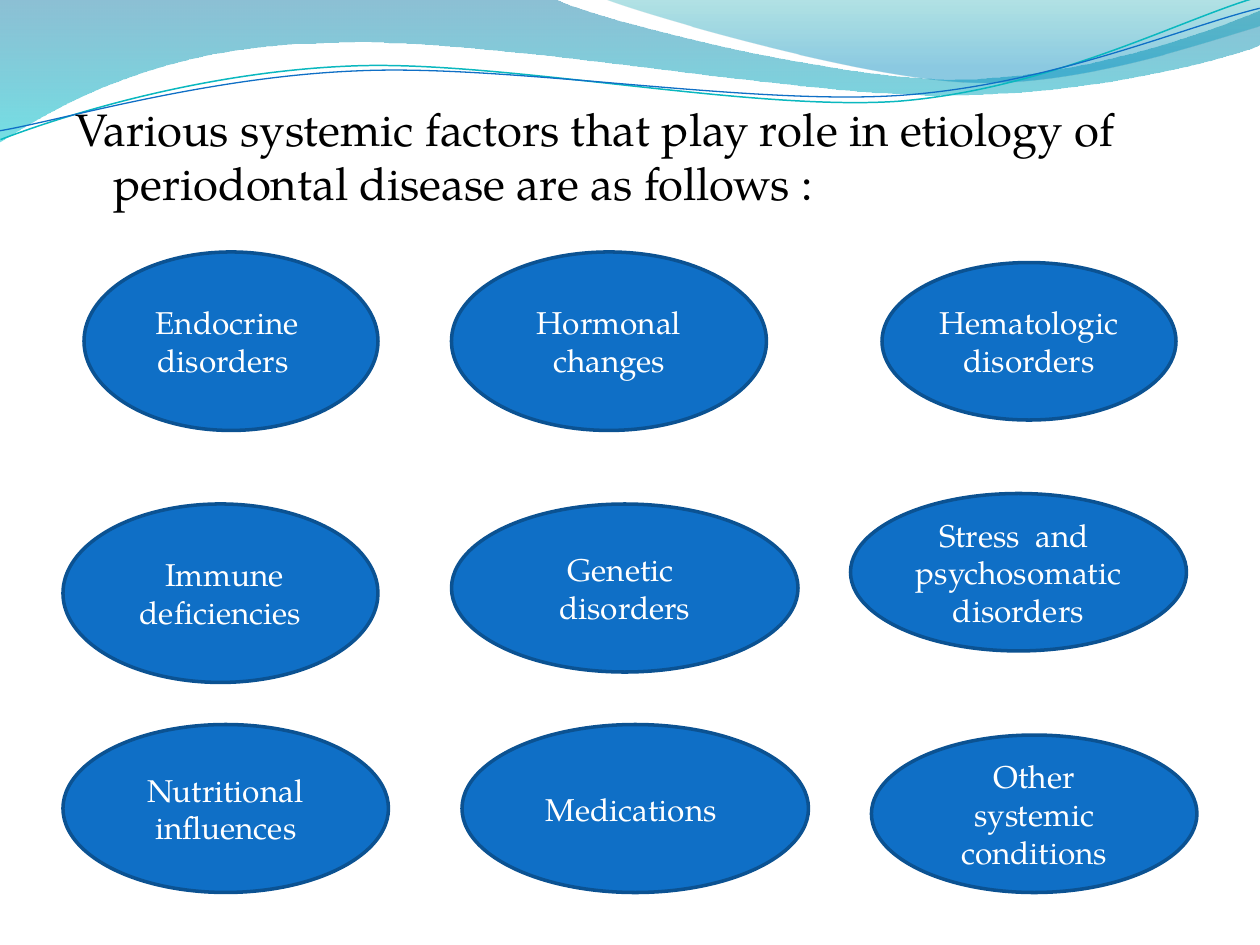
from lxml import etree
from pptx import Presentation
from pptx.dml.color import RGBColor
from pptx.enum.shapes import MSO_SHAPE
from pptx.enum.text import MSO_ANCHOR, PP_ALIGN
from pptx.oxml.ns import qn
from pptx.util import Emu, Pt

OVAL = MSO_SHAPE.OVAL
MIDDLE, TOP = MSO_ANCHOR.MIDDLE, MSO_ANCHOR.TOP
CENTER, LEFT = PP_ALIGN.CENTER, PP_ALIGN.LEFT

# Content: lengths in px, 126 to the inch; boxes in grid cells, 12 to the inch
PAGE = (1260, 945)
CELL = 10.5
HEADING = "Various systemic factors that play role in etiology of periodontal disease are as follows :"
HEADING_BOX = (6, 9, 108, 81)
HANGING = 38
FACTORS = [  # text, left, top, width, height
    ("Endocrine  disorders  ", 8, 24, 28, 17),
    (" Immune deficiencies", 6, 48, 30, 17),
    ("Hematologic disorders", 84, 25, 28, 15),
    ("Nutritional influences", 6, 69, 31, 16),
    ("Genetic  disorders", 43, 48, 33, 16),
    ("Stress  and  psychosomatic disorders", 81, 47, 32, 15),
    ("Medications ", 44, 69, 33, 16),
    ("Other systemic conditions", 83, 70, 31, 15),
    ("Hormonal changes", 43, 24, 30, 17),
]

# Outlines: a start, then points (2 numbers) or Bézier curves (6 numbers)
BAND = [(0, 0), (554, -1), (600, 21, 837, 79, 955, 79), (1075, 79, 1207, 33, 1260, 11),
        (1261, 45), (1239, 55, 1096, 96, 940, 95), (784, 95, 481, 35, 324, 43),
        (163, 45, 58, 105, -1, 142)]
CREST = [(604, -1), (641, 14, 859, 78, 969, 82), (1079, 87, 1211, 40, 1260, 26), (1260, 0)]
TEAL_WAVE = [(-2, 110), (58, 90, 200, 52, 350, 53), (498, 53, 745, 117, 896, 114),
             (1049, 109, 1184, 45, 1260, 27)]
BLUE_WAVE = [(-2, 101), (57, 94, 207, 57, 357, 58), (509, 58, 750, 112, 902, 108),
             (1052, 104, 1188, 52, 1262, 38)]
WAVE_ROTATION = 357.3

THEME = {
    "font": "TeX Gyre Pagella",
    "heading_size": 26, "factor_size": 18,
    "heading": "000000", "factor_text": "FFFFFF",
    "factor_fill": "0F6FC6", "factor_line": "0B5292", "factor_line_width": 2,
    # Gradient stops: position, colour, opacity in percent
    "band": [(0, "0074A1", 45), (1, "00C6CF", 55)],
    "crest": [(0, "00A1A9", 30), (0.8, "008BBF", 45)],
    "teal_wave": ("0AB8BF", 0.85), "blue_wave": ("0F6FC6", 0.75),
}


def px(length):
    return Emu(round(length * 914400 / 126))


def cells(box):
    return [px(count * CELL) for count in box]


def color(name):
    return RGBColor.from_string(name)


def add_outline(page, outline, close):
    """Draw straight steps between the nodes, then bend the curved ones."""
    nodes = [(px(step[-2]), px(step[-1])) for step in outline]
    builder = page.shapes.build_freeform(*nodes[0])
    builder.add_line_segments(nodes[1:], close=close)
    shape = builder.convert_to_shape()
    shape.shadow.inherit = False
    lines = list(shape._element.iter(qn("a:lnTo")))
    for line, step in zip(lines, outline[1:]):
        if len(step) == 6:
            curve = etree.Element(qn("a:cubicBezTo"))
            for x, y in zip(step[::2], step[1::2]):
                point = etree.SubElement(curve, qn("a:pt"))
                point.set("x", str(px(x) - shape.left))
                point.set("y", str(px(y) - shape.top))
            line.getparent().replace(line, curve)
    return shape


def add_area(page, outline, stops):
    shape = add_outline(page, outline, True)
    shape.line.fill.background()
    shape.fill.gradient()
    shape.fill.gradient_angle = 270  # top to bottom
    for stop, (position, name, _) in zip(shape.fill.gradient_stops, stops):
        stop.position = position
        stop.color.rgb = color(name)
    tags = shape._element.spPr.find(qn("a:gradFill")).iter(qn("a:srgbClr"))
    for tag, (_, _, opacity) in zip(tags, stops):
        etree.SubElement(tag, qn("a:alpha")).set("val", str(opacity * 1000))


def add_wave(page, outline, style):
    shape = add_outline(page, outline, False)
    shape.rotation = WAVE_ROTATION
    shape.fill.background()
    name, width = style
    shape.line.color.rgb = color(name)
    shape.line.width = Pt(width)


def write(box, text, size, name, align, anchor):
    frame = box.text_frame
    frame.word_wrap = True
    frame.vertical_anchor = anchor
    para = frame.paragraphs[0]
    para.alignment = align
    span = para.add_run()
    span.text = text
    span.font.name = THEME["font"]
    span.font.size = Pt(size)
    span.font.color.rgb = color(name)
    return para


def add_heading(page):
    box = page.shapes.add_textbox(*cells(HEADING_BOX))
    para = write(box, HEADING, THEME["heading_size"], THEME["heading"], LEFT, TOP)
    para.space_before = Pt(THEME["heading_size"] * 0.2)
    properties = para._p.get_or_add_pPr()
    properties.set("marL", str(px(HANGING)))
    properties.set("indent", str(-px(HANGING)))


def add_factor(page, text, *place):
    oval = page.shapes.add_shape(OVAL, *cells(place))
    oval.shadow.inherit = False
    oval.fill.solid()
    oval.fill.fore_color.rgb = color(THEME["factor_fill"])
    oval.line.color.rgb = color(THEME["factor_line"])
    oval.line.width = Pt(THEME["factor_line_width"])
    write(oval, text, THEME["factor_size"], THEME["factor_text"], CENTER, MIDDLE)


def main():
    deck = Presentation()
    deck.slide_width, deck.slide_height = map(px, PAGE)
    page = deck.slides.add_slide(deck.slide_layouts[6])

    # Wave decoration
    add_area(page, BAND, THEME["band"])
    add_area(page, CREST, THEME["crest"])
    add_wave(page, TEAL_WAVE, THEME["teal_wave"])
    add_wave(page, BLUE_WAVE, THEME["blue_wave"])

    # Heading and factors
    add_heading(page)
    for factor in FACTORS:
        add_factor(page, *factor)

    deck.save("out.pptx")


if __name__ == "__main__":
    main()
